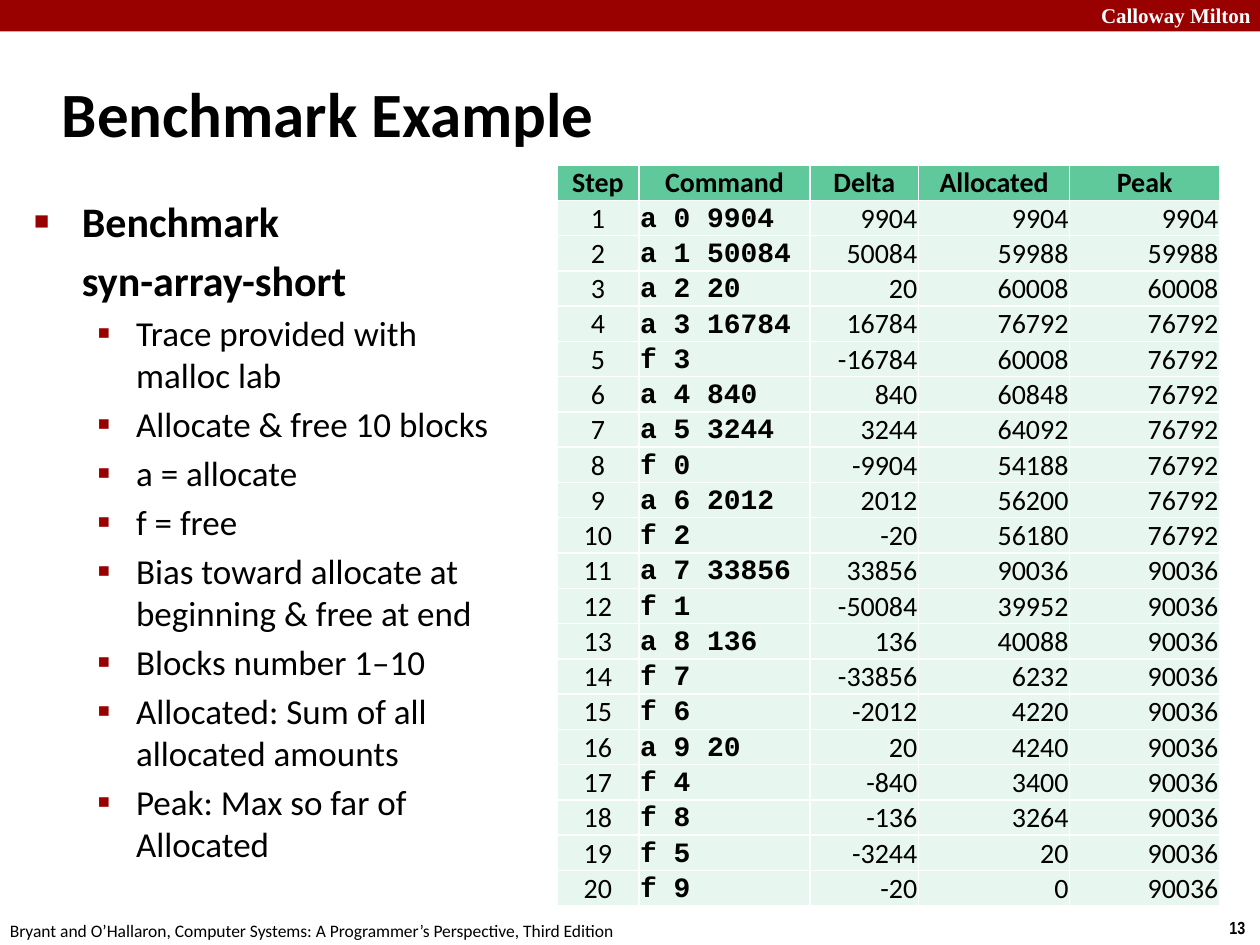
from pptx import Presentation
from pptx import util as u
from pptx.dml.color import RGBColor
from pptx.enum import shapes, text
from pptx.oxml import parse_xml
from pptx.oxml.ns import nsdecls

RED = RGBColor(0x99, 0x00, 0x00)
BLACK = RGBColor(0x00, 0x00, 0x00)
WHITE = RGBColor(0xFF, 0xFF, 0xFF)
GREEN = RGBColor(0x60, 0xC9, 0x9C)
MINT = RGBColor(0xE7, 0xF6, 0xEF)

LEFT, MID, RIGHT = text.PP_ALIGN.LEFT, text.PP_ALIGN.CENTER, text.PP_ALIGN.RIGHT
HEADS = ["Step", "Command", "Delta", "Allocated", "Peak"]
WIDTHS = [0.65, 1.36, 0.86, 1.2, 1.19]
ALIGNS = [MID, LEFT, RIGHT, RIGHT, RIGHT]
TRACE = [
    "a 0 9904", "a 1 50084", "a 2 20", "a 3 16784", "f 3",
    "a 4 840", "a 5 3244", "f 0", "a 6 2012", "f 2",
    "a 7 33856", "f 1", "a 8 136", "f 7", "f 6",
    "a 9 20", "f 4", "f 8", "f 5", "f 9",
]
POINTS = [
    "Trace provided with malloc lab",
    "Allocate & free 10 blocks",
    "a = allocate",
    "f = free",
    "Bias toward allocate at beginning & free at end",
    "Blocks number 1–10",
    "Allocated: Sum of all allocated amounts",
    "Peak: Max so far of Allocated",
]


def place(shape, box):
    """Move a shape to a box of left, top, width and height in inches."""
    shape.left, shape.top, shape.width, shape.height = map(u.Inches, box)


def write(para, words, size, bold=False, face="Calibri", color=BLACK):
    """Add one formatted run to a paragraph."""
    run = para.add_run()
    run.text = words
    font = run.font
    font.name, font.size, font.bold = face, u.Pt(size), bold
    font.color.rgb = color


def label(slide, box, words, size, wrap=False, **look):
    """Add a one-line text box."""
    frame = slide.shapes.add_textbox(*map(u.Inches, box)).text_frame
    frame.word_wrap = wrap
    write(frame.paragraphs[0], words, size, **look)


def banner(slide, box):
    """Draw the red strip with the school name at its right end."""
    x, y, w, h = box
    strip = slide.shapes.add_shape(shapes.MSO_SHAPE.RECTANGLE, *map(u.Inches, box))
    strip.shadow.inherit = False
    strip.fill.solid()
    strip.fill.fore_color.rgb = RED
    strip.line.fill.background()
    label(slide, (x + w - 1.36, y - 0.03, 1.43, 0.3), "Calloway Milton", 12,
          wrap=True, bold=True, face="Times New Roman", color=WHITE)


def footer(slide, box):
    """Write the book credit on the left and the page number on the right."""
    x, y, w, h = box
    label(slide, (x - 0.02, y + 0.02, 5.08, h),
          "Bryant and O’Hallaron, Computer Systems: A Programmer’s Perspective, Third Edition", 10)
    label(slide, (x + w - 0.34, y, 0.34, h), "13", 10, bold=True, face="Arial Narrow")


def heading(slide, box):
    """Fill the title placeholder."""
    title = slide.shapes.title
    place(title, box)
    title.text_frame.auto_size = text.MSO_AUTO_SIZE.NONE
    title.text_frame.vertical_anchor = text.MSO_ANCHOR.MIDDLE
    para = title.text_frame.paragraphs[0]
    para.alignment = LEFT
    write(para, "Benchmark Example", 36, bold=True)


def bullet(para, left, hang, mark="", scale=100):
    """Set the indent of a paragraph and its red mark, or no mark."""
    props = para._p.get_or_add_pPr()
    props.set("marL", str(u.Inches(left)))
    props.set("indent", str(-u.Inches(hang)))
    parts = [f'<a:buClr {nsdecls("a")}><a:srgbClr val="{RED}"/></a:buClr>',
             f'<a:buSzPct {nsdecls("a")} val="{scale * 1000}"/>',
             f'<a:buChar {nsdecls("a")} char="{mark}"/>']
    for part in parts if mark else [f'<a:buNone {nsdecls("a")}/>']:
        props.append(parse_xml(part))


def notes(slide, box):
    """Fill the body placeholder with the two-level list."""
    body = slide.placeholders[1]
    place(body, box)
    frame = body.text_frame
    frame.auto_size = text.MSO_AUTO_SIZE.NONE
    first = frame.paragraphs[0]
    bullet(first, 0.38, 0.38, "■", 60)
    write(first, "Benchmark", 24, bold=True)
    name = frame.add_paragraph()
    bullet(name, 0.38, 0)
    write(name, "syn-array-short", 24, bold=True)
    for point in POINTS:
        para = frame.add_paragraph()
        para.level = 1
        bullet(para, 0.81, 0.31, "▪", 110)
        write(para, point, 20)


def replay(trace):
    """Yield each step with its delta, running total and peak."""
    sizes, total, peak = {}, 0, 0
    for step, command in enumerate(trace, 1):
        action, block, *size = command.split()
        if action == "a":
            delta = sizes[block] = int(size[0])
        else:
            delta = -sizes[block]
        total += delta
        peak = max(peak, total)
        yield step, command, delta, total, peak


def fill(cell, words, align, color, **look):
    """Format one table cell and write its text."""
    cell.margin_left = cell.margin_right = cell.margin_top = u.Inches(0.01)
    cell.margin_bottom = 0
    cell.vertical_anchor = text.MSO_ANCHOR.BOTTOM
    props = cell._tc.get_or_add_tcPr()
    for side in "LRTB":
        props.append(parse_xml(
            f'<a:ln{side} {nsdecls("a")} w="{u.Pt(1)}"><a:solidFill>'
            f'<a:srgbClr val="{WHITE}"/></a:solidFill></a:ln{side}>'))
    cell.fill.solid()
    cell.fill.fore_color.rgb = color
    para = cell.text_frame.paragraphs[0]
    para.alignment = align
    write(para, str(words), 16, **look)


def steps(slide, box):
    """Build the table of allocation steps."""
    rows = list(replay(TRACE))
    table = slide.shapes.add_table(len(rows) + 1, len(HEADS), *map(u.Inches, box)).table
    table.horz_banding = False
    for row in table.rows:
        row.height = u.Inches(0.28)
    for col, width in enumerate(WIDTHS):
        table.columns[col].width = u.Inches(width)
        fill(table.cell(0, col), HEADS[col], MID, GREEN, bold=True)
        code = HEADS[col] == "Command"
        for num, row in enumerate(rows, 1):
            fill(table.cell(num, col), row[col], ALIGNS[col], MINT,
                 bold=code, face="Courier New" if code else "Calibri")


def main():
    """Build the slide and save it."""
    deck = Presentation()
    deck.slide_width, deck.slide_height = u.Inches(10), u.Inches(7.5)
    slide = deck.slides.add_slide(deck.slide_layouts[1])
    banner(slide, (0, 0, 10, 0.25))
    footer(slide, (0, 7.23, 10, 0.27))
    heading(slide, (0.39, 0.48, 8.3, 0.83))
    notes(slide, (0.17, 1.5, 3.9, 5.44))
    steps(slide, (4.42, 1.31, 5.26, 5.88))
    deck.save("out.pptx")


if __name__ == "__main__":
    main()
